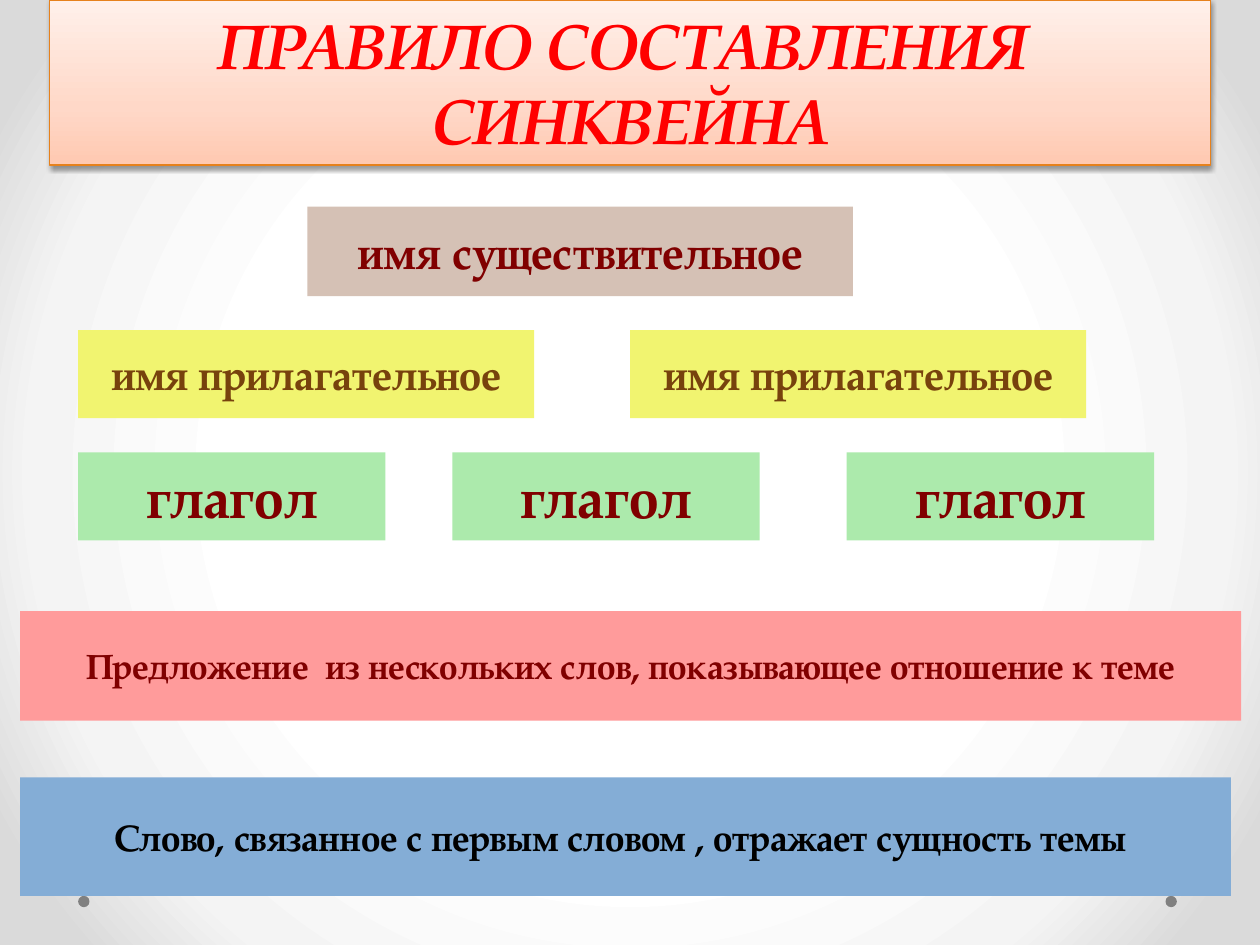
from pptx import Presentation
from pptx.dml.color import RGBColor
from pptx.enum.shapes import MSO_SHAPE
from pptx.enum.text import MSO_ANCHOR, MSO_AUTO_SIZE, PP_ALIGN
from pptx.oxml import parse_xml
from pptx.oxml.ns import nsdecls, qn
from pptx.util import Inches, Pt

FONT = "TeX Gyre Pagella"


def rgb(color):
    return RGBColor.from_string(color)


def gradient(stops, direction):
    gs = "".join(
        f'<a:gs pos="{pos * 1000}"><a:srgbClr val="{color}"/></a:gs>'
        for pos, color in stops
    )
    return parse_xml(
        f'<a:gradFill {nsdecls("a")} rotWithShape="1">'
        f"<a:gsLst>{gs}</a:gsLst>{direction}</a:gradFill>"
    )


def place(sp, box):
    sp.left, sp.top, sp.width, sp.height = (Inches(v) for v in box)


def write(sp, text, size, color, italic=False):
    p = sp.text_frame.paragraphs[0]
    p.text = text
    p.alignment = PP_ALIGN.CENTER
    font = p.font
    font.name, font.size, font.bold, font.italic = FONT, Pt(size), True, italic
    font.color.rgb = rgb(color)


def add_background(s):
    s.background.fill.solid()
    bg = s.element.find(".//" + qn("p:bgPr"))
    circle = ('<a:path path="circle"><a:fillToRect l="50000" t="50000" '
              'r="50000" b="50000"/></a:path>')
    stops = [(50, "FFFFFF"), (76, "F4F4F4"), (92, "DADADA")]
    bg.replace(bg[0], gradient(stops, circle))


def add_dot(s, box):
    sp = s.shapes.add_shape(MSO_SHAPE.OVAL, *(Inches(v) for v in box))
    sp.shadow.inherit = False
    sp.fill.solid()
    sp.fill.fore_color.rgb = rgb("808080")
    sp.line.fill.background()


def add_title(s, box):
    sp = s.shapes.title
    place(sp, box)
    tf = sp.text_frame
    tf.word_wrap = True
    tf.auto_size = MSO_AUTO_SIZE.SHAPE_TO_FIT_TEXT
    tf.vertical_anchor = MSO_ANCHOR.TOP
    write(sp, "ПРАВИЛО СОСТАВЛЕНИЯ  СИНКВЕЙНА", 36, "FF0000", italic=True)
    props = sp.element.spPr
    stops = [(0, "FFC9B1"), (35, "FFD8C8"), (100, "FFF0EA")]
    props.append(gradient(stops, '<a:lin ang="16200000" scaled="0"/>'))
    sp.line.color.rgb = rgb("E6811C")
    sp.line.width = Pt(0.75)
    props.append(parse_xml(
        f'<a:effectLst {nsdecls("a")}><a:outerShdw blurRad="{Pt(3.1)}" '
        f'dist="{Pt(1.6)}" dir="5400000" rotWithShape="0">'
        '<a:srgbClr val="000000"><a:alpha val="38000"/></a:srgbClr>'
        "</a:outerShdw></a:effectLst>"
    ))


def add_card(s, box, text, size, fill, color):
    sp = s.shapes.add_shape(MSO_SHAPE.RECTANGLE, *(Inches(v) for v in box))
    sp.shadow.inherit = False
    sp.fill.solid()
    sp.fill.fore_color.rgb = rgb(fill)
    sp.line.fill.background()
    sp.text_frame.word_wrap = False
    sp.text_frame.vertical_anchor = MSO_ANCHOR.MIDDLE
    write(sp, text, size, color)


def add_row(s, box, count, step, *style):
    left, top, width, height = box
    for i in range(count):
        add_card(s, (left + i * step, top, width, height), *style)


def main():
    prs = Presentation()
    prs.slide_width, prs.slide_height = Inches(10), Inches(7.5)
    s = prs.slides.add_slide(prs.slide_layouts[5])
    add_background(s)
    for left in (0.62, 9.25):
        add_dot(s, (left, 7.11, 0.09, 0.09))
    add_title(s, (0.39, 0, 9.22, 1.31))
    add_card(s, (2.44, 1.64, 4.33, 0.71), "имя существительное",
             26, "D5C1B5", "800000")
    add_row(s, (0.62, 2.62, 3.62, 0.7), 2, 4.38, "имя прилагательное",
            24, "F1F470", "77420D")
    for left in (0.62, 3.59, 6.72):
        add_card(s, (left, 3.59, 2.44, 0.7), "глагол",
                 32, "ACEAAC", "800000")
    add_card(s, (0.16, 4.85, 9.69, 0.87),
             "Предложение  из нескольких слов, показывающее отношение к теме",
             20, "FF9B9B", "800000")
    add_card(s, (0.16, 6.17, 9.61, 0.94),
             "Слово, связанное с первым словом , отражает сущность темы ",
             21, "84ADD6", "000000")
    prs.save("out.pptx")


if __name__ == "__main__":
    main()
